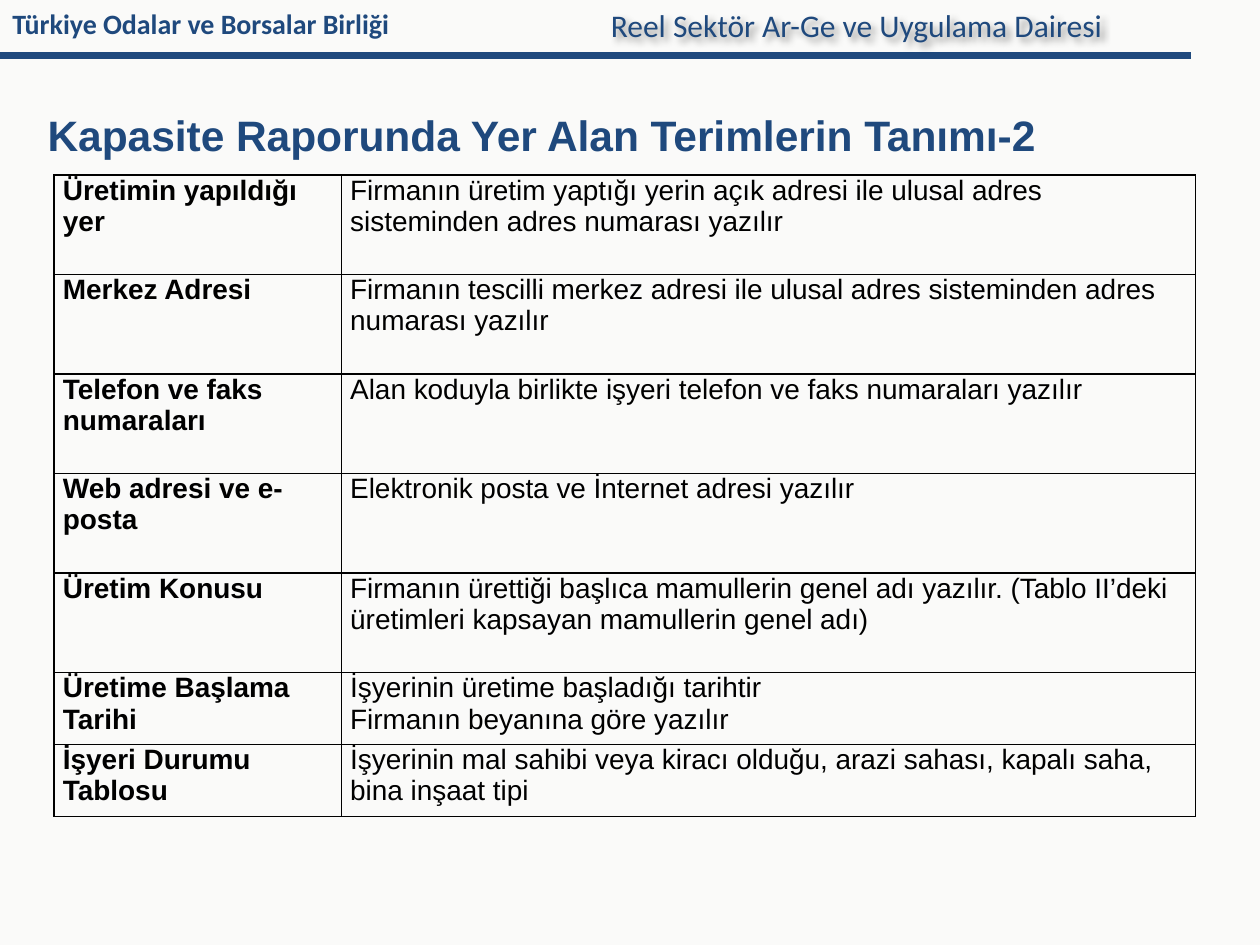
from dataclasses import dataclass

from lxml.etree import SubElement
from pptx import Presentation
from pptx.dml.color import RGBColor
from pptx.enum.shapes import MSO_CONNECTOR
from pptx.enum.text import MSO_ANCHOR
from pptx.oxml import parse_xml
from pptx.oxml.ns import nsdecls, qn
from pptx.util import Inches, Pt

NAVY = "1F497D"
BLACK = "000000"
ROW_HEIGHTS = [0.79] * 5 + [0.57] * 2
COLUMN_WIDTHS = [2.28, 6.78]


@dataclass
class Label:
    text: str
    left: float
    top: float
    width: float
    height: float
    font: str
    size: float
    bold: bool = False
    anchor: MSO_ANCHOR = MSO_ANCHOR.TOP
    line_spacing: float = 1.0


@dataclass
class Term:
    name: str
    meaning: str


ORGANISATION = Label("Türkiye Odalar ve Borsalar Birliği", 0, 0, 8.15, 0.37, "Calibri", 16, True)
DEPARTMENT = Label("Reel Sektör Ar-Ge ve Uygulama Dairesi", 4.75, 0, 4.41, 0.4, "Calibri", 18)
TITLE = Label("Kapasite Raporunda Yer Alan Terimlerin Tanımı-2", 0.28, 0.8, 9.24, 0.47,
              "Arial", 24.3, True, MSO_ANCHOR.MIDDLE, 1.15)

TERMS = [
    Term("Üretimin yapıldığı yer",
         "Firmanın üretim yaptığı yerin açık adresi ile ulusal adres sisteminden adres numarası yazılır"),
    Term("Merkez Adresi",
         "Firmanın tescilli merkez adresi ile ulusal adres sisteminden adres numarası yazılır"),
    Term("Telefon ve faks numaraları",
         "Alan koduyla birlikte işyeri telefon ve faks numaraları yazılır"),
    Term("Web adresi ve e-posta", "Elektronik posta ve İnternet adresi yazılır"),
    Term("Üretim Konusu",
         "Firmanın ürettiği başlıca mamullerin genel adı yazılır. "
         "(Tablo II’deki üretimleri kapsayan mamullerin genel adı)"),
    Term("Üretime Başlama Tarihi",
         "İşyerinin üretime başladığı tarihtir\nFirmanın beyanına göre yazılır"),
    Term("İşyeri Durumu Tablosu",
         "İşyerinin mal sahibi veya kiracı olduğu, arazi sahası, kapalı saha, bina inşaat tipi"),
]


def rgb(value: str) -> RGBColor:
    return RGBColor.from_string(value)


def format_text(tf, font: str, size: float, color: str, bold: bool) -> None:
    for p in tf.paragraphs:
        for r in p.runs:
            r.font.name = font
            r.font.size = Pt(size)
            r.font.bold = bold
            r.font.color.rgb = rgb(color)


def add_label(s, label: Label):
    box = s.shapes.add_textbox(Inches(label.left), Inches(label.top),
                               Inches(label.width), Inches(label.height))
    tf = box.text_frame
    tf.word_wrap = True
    tf.vertical_anchor = label.anchor
    tf.text = label.text
    tf.paragraphs[0].line_spacing = label.line_spacing
    format_text(tf, label.font, label.size, NAVY, label.bold)
    return box


def add_shadow(shape) -> None:
    shape._element.spPr.append(parse_xml(
        f'<a:effectLst {nsdecls("a")}><a:outerShdw blurRad="50800" dist="38100" dir="2700000">'
        '<a:srgbClr val="000000"><a:alpha val="40000"/></a:srgbClr>'
        '</a:outerShdw></a:effectLst>'))


def add_header_rule(s) -> None:
    line = s.shapes.add_connector(MSO_CONNECTOR.STRAIGHT, Inches(0), Inches(0.44),
                                  Inches(9.45), Inches(0.44))
    line.line.color.rgb = rgb(NAVY)
    line.line.width = Pt(4)
    SubElement(line._element.spPr, qn("a:effectLst"))


def set_borders(cell) -> None:
    tc_pr = cell._tc.get_or_add_tcPr()
    for i, side in enumerate(("lnL", "lnR", "lnT", "lnB")):
        tc_pr.insert(i, parse_xml(
            f'<a:{side} {nsdecls("a")} w="{Pt(1)}"><a:solidFill>'
            f'<a:srgbClr val="{BLACK}"/></a:solidFill></a:{side}>'))


def fill_cell(cell, text: str, bold: bool) -> None:
    cell.margin_left = cell.margin_right = Inches(0.07)
    cell.margin_top = cell.margin_bottom = Inches(0)
    cell.text_frame.text = text
    format_text(cell.text_frame, "Arial", 16, BLACK, bold)
    cell.fill.background()
    set_borders(cell)


def add_terms_table(s, terms: list[Term]) -> None:
    table = s.shapes.add_table(len(terms), len(COLUMN_WIDTHS), Inches(0.43), Inches(1.39),
                               Inches(sum(COLUMN_WIDTHS)), Inches(sum(ROW_HEIGHTS))).table
    table.first_row = table.horz_banding = False
    for column, width in zip(table.columns, COLUMN_WIDTHS):
        column.width = Inches(width)
    for row, height, term in zip(table.rows, ROW_HEIGHTS, terms):
        row.height = Inches(height)
        fill_cell(row.cells[0], term.name, True)
        fill_cell(row.cells[1], term.meaning, False)


def main() -> None:
    prs = Presentation()
    prs.slide_width, prs.slide_height = Inches(10), Inches(7.5)
    s = prs.slides.add_slide(prs.slide_layouts[6])
    s.background.fill.solid()
    s.background.fill.fore_color.rgb = rgb("FAFAF9")
    add_header_rule(s)
    add_label(s, ORGANISATION)
    add_label(s, TITLE)
    add_shadow(add_label(s, DEPARTMENT))
    add_terms_table(s, TERMS)
    prs.save("out.pptx")


if __name__ == "__main__":
    main()
